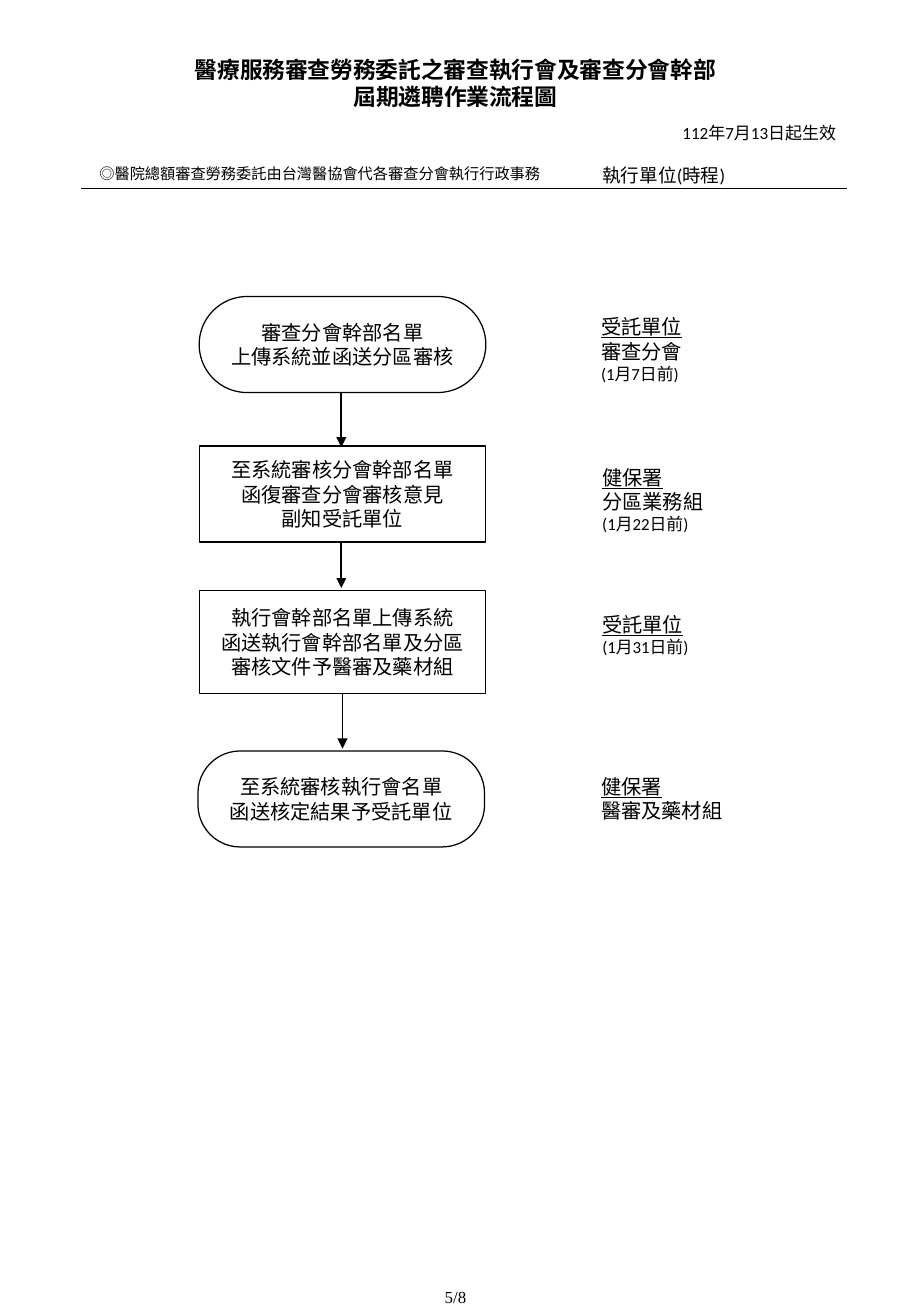
from lxml import etree
from pptx import Presentation
from pptx.dml.color import RGBColor
from pptx.enum.shapes import MSO_CONNECTOR, MSO_SHAPE
from pptx.enum.text import MSO_ANCHOR, MSO_AUTO_SIZE, PP_ALIGN
from pptx.oxml.ns import qn
from pptx.util import Pt

PX = 9144
BLACK = RGBColor(0, 0, 0)
WHITE = RGBColor(255, 255, 255)
RECT, ROUND = MSO_SHAPE.RECTANGLE, MSO_SHAPE.ROUNDED_RECTANGLE
CENTER, LEFT = PP_ALIGN.CENTER, PP_ALIGN.LEFT

STEPS = [
    (ROUND, 164, 244, 79, 0.5, ["審查分會幹部名單", "上傳系統並函送分區審核"]),
    (RECT, 164, 367, 79, None,
     ["至系統審核分會幹部名單", "函復審查分會審核意見", "副知受託單位"]),
    (RECT, 164, 486, 85, None,
     ["執行會幹部名單上傳系統", "函送執行會幹部名單及分區審核文件予醫審及藥材組"]),
    (ROUND, 163, 618, 79, 0.44, ["至系統審核執行會名單", "函送核定結果予受託單位"]),
]
UNITS = [
    (485, 254, 88, 67, True, [("受託單位", 12), ("審查分會", 12), ("(1月7日前)", 10)]),
    (486, 378, 104, 67, False, [("健保署", 12), ("分區業務組", 12), ("(1月22日前)", 10)]),
    (486, 499, 92, 47, True, [("受託單位", 12), ("(1月31日前)", 10)]),
    (485, 632, 121, 50, False, [("健保署", 12), ("醫審及藥材組", 12)]),
]
ARROWS = [(281, 321, 368), (281, 444, 484), (282, 561, 616)]


def emu(*lengths):
    return [n * PX for n in lengths]


def write(tf, lines, align=LEFT, font="Calibri", bold=False):
    for i, (text, size) in enumerate(lines):
        p = tf.paragraphs[0] if i == 0 else tf.add_paragraph()
        p.text = text
        p.alignment = align
        p.font.name, p.font.size, p.font.bold = font, Pt(size), bold
        p.font.color.rgb = BLACK


def add_text(s, x, y, w, h, lines, wrap=True, grow=True, **style):
    tf = s.shapes.add_textbox(*emu(x, y, w, h)).text_frame
    tf.word_wrap = wrap
    if grow:
        tf.auto_size = MSO_AUTO_SIZE.SHAPE_TO_FIT_TEXT
    else:
        tf.vertical_anchor = MSO_ANCHOR.MIDDLE
    write(tf, lines, **style)
    return tf


def add_unit(s, x, y, w, h, wrap, lines):
    tf = add_text(s, x, y, w, h, lines, wrap)
    tf.paragraphs[0].runs[0].font.underline = True


def add_step(s, kind, x, y, h, radius, lines):
    sp = s.shapes.add_shape(kind, *emu(x, y, 236, h))
    sp.shadow.inherit = False
    if radius:
        sp.adjustments[0] = radius
    sp.fill.solid()
    sp.fill.fore_color.rgb = WHITE
    sp.line.color.rgb = BLACK
    sp.line.width = Pt(0.75)
    tf = sp.text_frame
    tf.word_wrap = True
    tf.vertical_anchor = MSO_ANCHOR.MIDDLE
    write(tf, [(text, 12) for text in lines], CENTER)


def add_line(s, x1, y1, x2, y2, arrow=False):
    line = s.shapes.add_connector(MSO_CONNECTOR.STRAIGHT, *emu(x1, y1, x2, y2))
    line.line.color.rgb = BLACK
    line.line.width = Pt(1)
    if arrow:
        etree.SubElement(line.line._get_or_add_ln(), qn("a:tailEnd"), type="triangle")
    etree.SubElement(line._element.spPr, qn("a:effectLst"))


def main():
    """Build the reappointment flowchart page."""
    prs = Presentation()
    prs.slide_width, prs.slide_height = emu(750, 1083)
    s = prs.slides.add_slide(prs.slide_layouts[6])

    add_text(s, 0, 41, 750, 56,
             [("醫療服務審查勞務委託之審查執行會及審查分會幹部", 13.5),
              ("屆期遴聘作業流程圖", 13.5)], align=CENTER, bold=True)
    add_text(s, 552, 96, 163, 27, [("112年7月13日起生效", 10.1)])
    add_text(s, 72, 130, 386, 25,
             [("◎醫院總額審查勞務委託由台灣醫協會代各審查分會執行行政事務", 9)],
             wrap=False, font="Noto Sans CJK SC")
    add_text(s, 486, 130, 242, 29, [("執行單位(時程)", 11)])
    add_line(s, 67, 155, 697, 155)

    for x, top, bottom in ARROWS:
        add_line(s, x, top, x, bottom, arrow=True)
    for step in STEPS:
        add_step(s, *step)
    for unit in UNITS:
        add_unit(s, *unit)

    add_text(s, 0, 1049, 750, 36, [("5/8", 10)], grow=False,
             align=CENTER, font="Times New Roman")
    prs.save("out.pptx")


if __name__ == "__main__":
    main()
